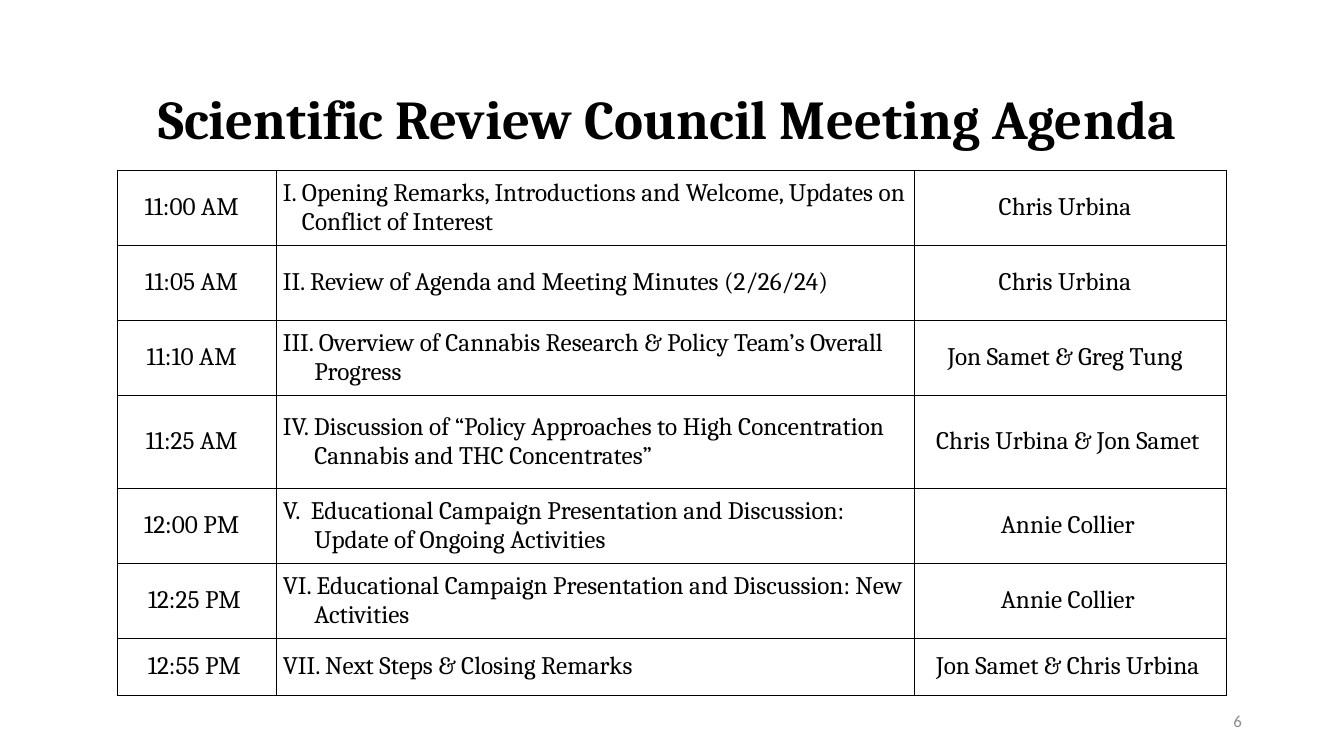
"""Build the Scientific Review Council meeting agenda slide."""
from dataclasses import dataclass

from lxml.etree import SubElement
from pptx import Presentation
from pptx.dml.color import RGBColor
from pptx.enum.text import MSO_ANCHOR, MSO_AUTO_SIZE, PP_ALIGN
from pptx.oxml.ns import qn
from pptx.slide import Slide
from pptx.table import _Cell
from pptx.text.text import _Paragraph
from pptx.util import Cm, Pt


@dataclass(frozen=True)
class Theme:
    heading_font: str = "Cambria"
    number_font: str = "Calibri"
    ink: str = "000000"
    muted: str = "8C8C8C"
    title_size: float = 39.1
    table_size: float = 18
    number_size: float = 12
    border_width: float = 0.75


@dataclass(frozen=True)
class AgendaItem:
    time: str
    topic: str
    speakers: str
    hanging: float = 0.79
    height: float = 1.89
    numbered: bool = False


THEME = Theme()
COLUMN_WIDTHS = (4, 16.08, 7.86)
CELL_FORMAT = {
    "vertical_anchor": MSO_ANCHOR.MIDDLE,
    "margin_left": Cm(0.16),
    "margin_right": Cm(0.16),
    "margin_top": Cm(0.13),
    "margin_bottom": Cm(0.13),
}
AGENDA = (
    AgendaItem("11:00 AM  ", "Opening Remarks, Introductions and Welcome, Updates on Conflict of Interest ",
               "Chris Urbina  ", hanging=0.48, numbered=True),
    AgendaItem("11:05 AM  ", "II. Review of Agenda and Meeting Minutes (2/26/24) ",
               "Chris Urbina  ", hanging=0),
    AgendaItem("11:10 AM  ", "III. Overview of Cannabis Research & Policy Team’s Overall Progress ",
               "Jon Samet & Greg Tung  "),
    AgendaItem("11:25 AM  ", "IV. Discussion of “Policy Approaches to High Concentration Cannabis and THC Concentrates”  ",
               "Chris Urbina & Jon Samet ", height=2.34),
    AgendaItem("12:00 PM  ", "V.  Educational Campaign Presentation and Discussion: Update of Ongoing Activities ",
               "Annie Collier "),
    AgendaItem("12:25 PM ", "VI. Educational Campaign Presentation and Discussion: New Activities  ",
               "Annie Collier "),
    AgendaItem("12:55 PM ", "VII. Next Steps & Closing Remarks ",
               "Jon Samet & Chris Urbina ", hanging=0, height=1.44),
)


def write(paragraph: _Paragraph, text: str, align: PP_ALIGN, font: str,
          size: float, color: str, bold: bool = False) -> None:
    """Put one formatted run into a paragraph."""
    paragraph.alignment = align
    run = paragraph.add_run()
    run.text = text
    for name, value in {"name": font, "size": Pt(size), "bold": bold}.items():
        setattr(run.font, name, value)
    run.font.color.rgb = RGBColor.from_string(color)


def hang(paragraph: _Paragraph, indent: float, numbered: bool) -> None:
    """Give a paragraph a hanging indent and, if wanted, a Roman numeral."""
    properties = paragraph._p.get_or_add_pPr()
    properties.set("marL", str(Cm(indent)))
    properties.set("indent", str(-Cm(indent)))
    if numbered:
        SubElement(properties, qn("a:buFont"), typeface=THEME.heading_font)
        SubElement(properties, qn("a:buAutoNum"), type="romanUcPeriod")


def style_cell(cell: _Cell) -> None:
    """Set margins, anchor and borders of a cell and clear its fill."""
    for name, value in CELL_FORMAT.items():
        setattr(cell, name, value)
    properties = cell._tc.get_or_add_tcPr()
    for side in ("lnL", "lnR", "lnT", "lnB"):
        border = SubElement(properties, qn(f"a:{side}"), w=str(Pt(THEME.border_width)))
        SubElement(SubElement(border, qn("a:solidFill")), qn("a:srgbClr"), val=THEME.ink)
    cell.fill.background()


def add_title(slide: Slide) -> None:
    """Move and fill the title placeholder."""
    title = slide.shapes.title
    for name, value in {"left": Cm(3.73), "top": Cm(1.32), "width": Cm(27.18), "height": Cm(2.59)}.items():
        setattr(title, name, value)
    frame = title.text_frame
    for name, value in {"auto_size": MSO_AUTO_SIZE.NONE, "word_wrap": True,
                        "vertical_anchor": MSO_ANCHOR.BOTTOM}.items():
        setattr(frame, name, value)
    heading = frame.paragraphs[0]
    heading.line_spacing = 0.8
    heading.space_after = Pt(6)
    write(heading, "Scientific Review Council Meeting Agenda ", PP_ALIGN.LEFT,
          THEME.heading_font, THEME.title_size, THEME.ink, bold=True)


def add_agenda(slide: Slide) -> None:
    """Draw the agenda table."""
    agenda = slide.shapes.add_table(
        len(AGENDA), len(COLUMN_WIDTHS), Cm(2.97), Cm(4.29),
        Cm(sum(COLUMN_WIDTHS)), Cm(sum(item.height for item in AGENDA))).table
    agenda.first_row = agenda.horz_banding = False
    for column, width in zip(agenda.columns, COLUMN_WIDTHS):
        column.width = Cm(width)
    aligns = (PP_ALIGN.CENTER, PP_ALIGN.LEFT, PP_ALIGN.CENTER)
    for row, item in zip(agenda.rows, AGENDA):
        row.height = Cm(item.height)
        for cell, text, align in zip(row.cells, (item.time, item.topic, item.speakers), aligns):
            style_cell(cell)
            write(cell.text_frame.paragraphs[0], text, align,
                  THEME.heading_font, THEME.table_size, THEME.ink)
        hang(row.cells[1].text_frame.paragraphs[0], item.hanging, item.numbered)


def add_page_number(slide: Slide) -> None:
    """Place the page number at the lower right."""
    frame = slide.shapes.add_textbox(Cm(23.93), Cm(17.65), Cm(7.62), Cm(1.02)).text_frame
    frame.word_wrap = True
    frame.vertical_anchor = MSO_ANCHOR.MIDDLE
    write(frame.paragraphs[0], "6", PP_ALIGN.RIGHT,
          THEME.number_font, THEME.number_size, THEME.muted)


def main() -> None:
    """Assemble and save the slide."""
    deck = Presentation()
    deck.slide_width, deck.slide_height = Cm(33.87), Cm(19.05)
    slide = deck.slides.add_slide(deck.slide_layouts[5])
    add_title(slide)
    add_agenda(slide)
    add_page_number(slide)
    deck.save("out.pptx")


if __name__ == "__main__":
    main()
